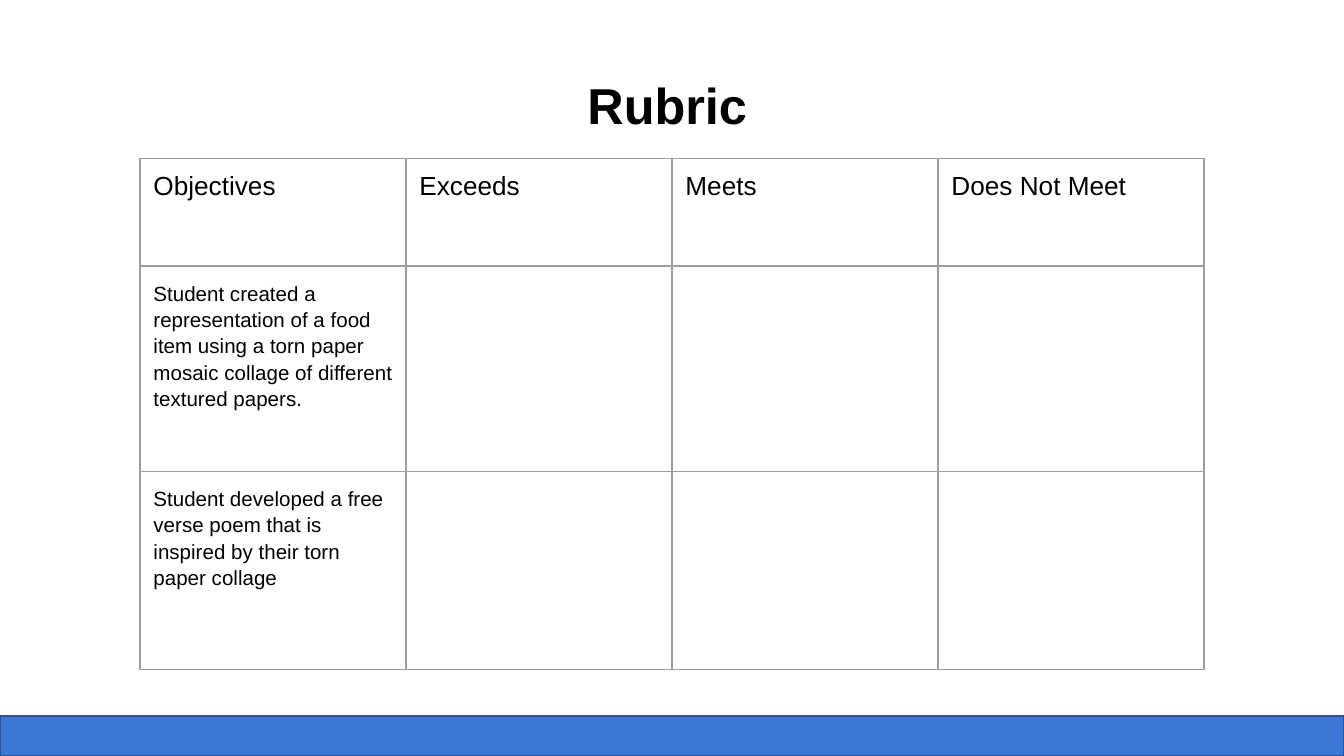
from lxml.etree import SubElement
from pptx import Presentation
from pptx.dml.color import RGBColor
from pptx.enum.shapes import MSO_SHAPE
from pptx.enum.text import MSO_ANCHOR, PP_ALIGN
from pptx.oxml.ns import qn
from pptx.util import Pt

SLIDE_WIDTH, SLIDE_HEIGHT = 720, 405
BAND_TOP = 383.5
COLUMN_WIDTH = 142.5
ROW_HEIGHTS = [57.5, 110, 106]
RUBRIC = [
    ["Objectives", "Exceeds", "Meets", "Does Not Meet"],
    ["Student created a representation of a food item using a torn paper "
     "mosaic collage of different textured papers.", "", "", ""],
    ["Student developed a free verse poem that is inspired by their torn "
     "paper collage", "", "", ""],
]
HEADING = {"size": Pt(14), "bold": False}
OBJECTIVE = {"size": Pt(11), "bold": False}
CELL_MARGINS = {f"margin_{side}": Pt(7.2)
                for side in ("left", "top", "right", "bottom")}


def color(hex_code):
    return RGBColor.from_string(hex_code)


def set_attributes(target, values):
    for name, value in values.items():
        setattr(target, name, value)


def write(paragraph, text, font_format):
    run = paragraph.add_run()
    run.text = text
    set_attributes(run.font, {"name": "Arial", **font_format})
    run.font.color.rgb = color("000000")


def add_band(slide):
    band = slide.shapes.add_shape(
        MSO_SHAPE.RECTANGLE, 0, Pt(BAND_TOP),
        Pt(SLIDE_WIDTH), Pt(SLIDE_HEIGHT - BAND_TOP))
    band.shadow.inherit = False
    band.fill.solid()
    band.fill.fore_color.rgb = color("3C78D8")
    band.line.color.rgb = color("31538F")
    band.line.width = Pt(1)


def add_title(slide, text):
    title = slide.shapes.add_textbox(Pt(13.5), Pt(31.5), Pt(688), Pt(74))
    set_attributes(title.text_frame, {
        "word_wrap": True, "vertical_anchor": MSO_ANCHOR.TOP,
        "margin_left": Pt(5), "margin_right": Pt(5),
        "margin_top": Pt(8), "margin_bottom": Pt(5)})
    paragraph = title.text_frame.paragraphs[0]
    paragraph.alignment = PP_ALIGN.CENTER
    write(paragraph, text, {"size": Pt(27), "bold": True})


def add_borders(cell, hex_code, width):
    properties = cell._tc.get_or_add_tcPr()
    for position, side in enumerate(("lnL", "lnR", "lnT", "lnB")):
        border = SubElement(properties, qn(f"a:{side}"), w=str(Pt(width)))
        fill = SubElement(border, qn("a:solidFill"))
        SubElement(fill, qn("a:srgbClr"), val=hex_code)
        # Borders come before the cell fill
        properties.insert(position, border)


def add_rubric(slide):
    columns = len(RUBRIC[0])
    rubric = slide.shapes.add_table(
        len(RUBRIC), columns, Pt(75), Pt(85),
        Pt(COLUMN_WIDTH * columns), Pt(sum(ROW_HEIGHTS))).table
    set_attributes(rubric, {"first_row": False, "horz_banding": False})
    for column in rubric.columns:
        column.width = Pt(COLUMN_WIDTH)
    for row_index, (height, texts) in enumerate(zip(ROW_HEIGHTS, RUBRIC)):
        rubric.rows[row_index].height = Pt(height)
        for column_index, text in enumerate(texts):
            cell = rubric.cell(row_index, column_index)
            set_attributes(cell, CELL_MARGINS)
            cell.fill.background()
            add_borders(cell, "9E9E9E", 0.75)
            if text:
                paragraph = cell.text_frame.paragraphs[0]
                if row_index:
                    paragraph.line_spacing = 1.15
                write(paragraph, text, OBJECTIVE if row_index else HEADING)


def main():
    presentation = Presentation()
    set_attributes(presentation, {"slide_width": Pt(SLIDE_WIDTH),
                                  "slide_height": Pt(SLIDE_HEIGHT)})
    slide = presentation.slides.add_slide(presentation.slide_layouts[6])

    # Bottom band
    add_band(slide)
    # Title
    add_title(slide, "Rubric")
    # Assessment grid
    add_rubric(slide)

    presentation.save("out.pptx")


if __name__ == "__main__":
    main()
